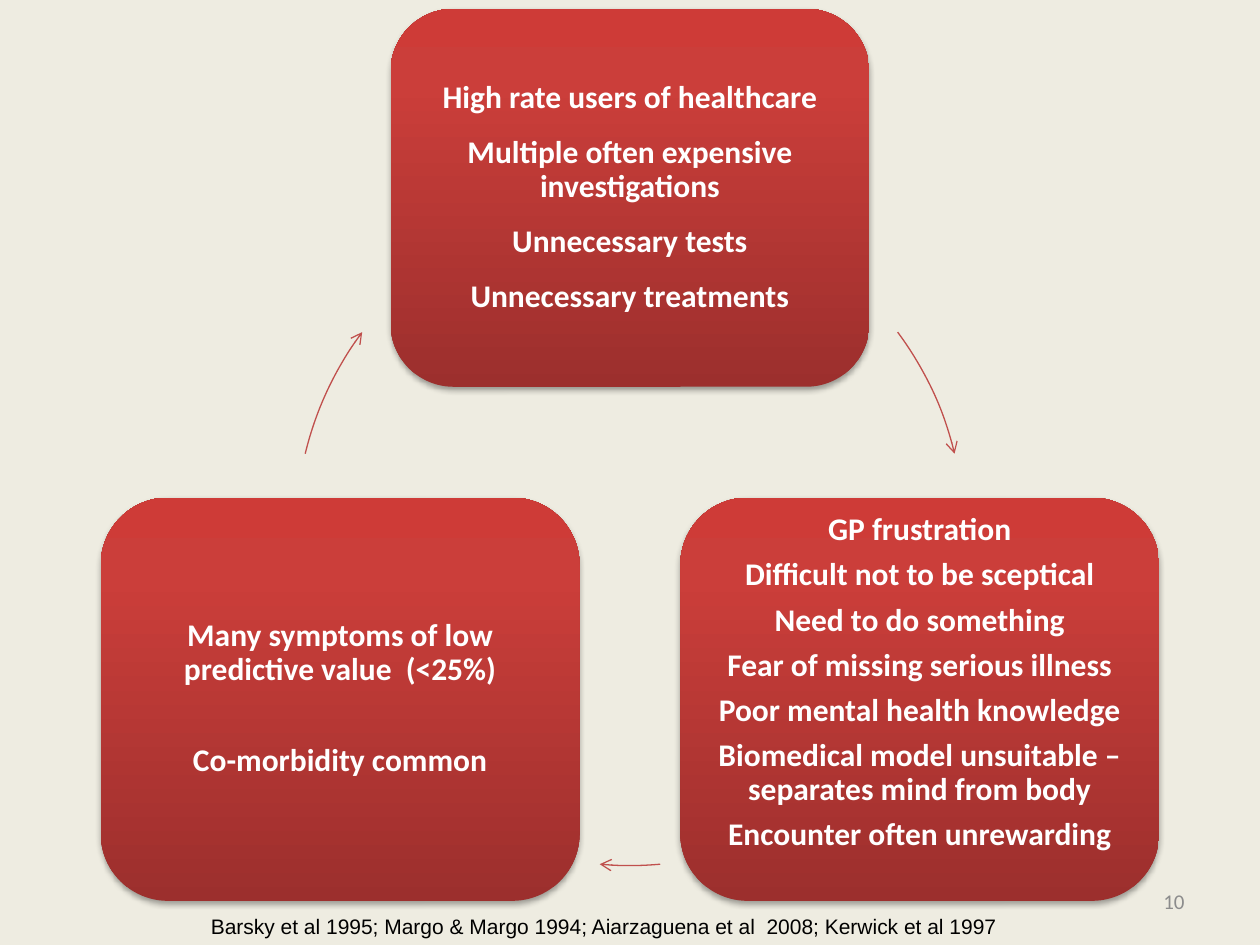
from lxml import etree
from pptx import Presentation
from pptx.dml.color import RGBColor
from pptx.enum.shapes import MSO_SHAPE as SHAPE
from pptx.enum.text import MSO_ANCHOR as ANCHOR, PP_ALIGN as ALIGN
from pptx.oxml import parse_xml
from pptx.oxml.ns import nsdecls, qn
from pptx.util import Inches, Pt

COLORS = {
    "background": "EEECE1", "dark": "9C2F2D", "mid": "CB3E3A", "light": "CE3B37",
    "arrow": "C0504D", "white": "FFFFFF", "black": "000000", "number": "8C8C8C",
}
GRADIENT = [(0, "dark"), (80, "mid"), (100, "light")]

BOXES = [
    {"at": (3.1, 0.07, 3.8, 3), "after": 12, "insets": (0.07, 0.07), "lines": [
        "High rate users of healthcare",
        "Multiple often expensive investigations",
        "Unnecessary tests",
        "Unnecessary treatments"]},
    {"at": (5.4, 3.95, 3.8, 3.2), "after": 6.3, "insets": (0, 0.26), "lines": [
        "GP frustration",
        "Difficult not to be sceptical",
        "Need to do something",
        "Fear of missing serious illness",
        "Poor mental health knowledge",
        "Biomedical model unsuitable –separates mind from body",
        "Encounter often unrewarding"]},
    {"at": (0.8, 3.95, 3.8, 3.2), "after": 32.5, "insets": (0.07, 0.07), "lines": [
        "Many symptoms of low predictive value  (<25%)",
        "Co-morbidity common"]},
]
CYCLE = (2.35, 1.57, 5.3, 5.3)
ARROW_ANGLES = [(323.3, 346.5), (84.8, 95.2), (193.5, 216.7)]
PAGE_NUMBER = "10"
CITATION = "Barsky et al 1995; Margo & Margo 1994; Aiarzaguena et al  2008; Kerwick et al 1997"


def rgb(name):
    return RGBColor.from_string(COLORS[name])


def place(at):
    return [Inches(v) for v in at]


def add_run(p, text, size, font, color, bold=False):
    r = p.add_run()
    r.text = text
    r.font.size, r.font.name, r.font.bold = Pt(size), font, bold
    r.font.color.rgb = rgb(color)


def add_box(s, at, after, insets, lines):
    sp = s.shapes.add_shape(SHAPE.ROUNDED_RECTANGLE, *place(at))
    stops = "".join(f'<a:gs pos="{pos * 1000}"><a:srgbClr val="{COLORS[name]}"/></a:gs>'
                    for pos, name in GRADIENT)
    props = sp.element.spPr
    props.append(parse_xml(
        f'<a:gradFill {nsdecls("a")} rotWithShape="1"><a:gsLst>{stops}</a:gsLst>'
        '<a:lin ang="16200000" scaled="0"/></a:gradFill>'))
    sp.line.fill.background()
    props.append(parse_xml(
        f'<a:effectLst {nsdecls("a")}><a:outerShdw blurRad="{Pt(3.1)}" dist="{Pt(1.8)}" '
        f'dir="5400000" rotWithShape="0"><a:srgbClr val="{COLORS["black"]}">'
        '<a:alpha val="35000"/></a:srgbClr></a:outerShdw></a:effectLst>'))
    tf = sp.text_frame
    tf.word_wrap, tf.vertical_anchor = True, ANCHOR.MIDDLE
    tf.margin_left = tf.margin_right = Inches(0.07)
    tf.margin_top, tf.margin_bottom = place(insets)
    for i, line in enumerate(lines):
        p = tf.add_paragraph() if i else tf.paragraphs[0]
        p.alignment, p.line_spacing, p.space_after = ALIGN.CENTER, 0.9, Pt(after)
        add_run(p, line, 18, "Calibri", "white", True)


def add_arrow(s, angles):
    sp = s.shapes.add_shape(SHAPE.ARC, *place(CYCLE))
    for i, angle in enumerate(angles):
        sp.adjustments[i] = angle * 0.6
    sp.shadow.inherit = False
    sp.fill.background()
    sp.line.color.rgb, sp.line.width = rgb("arrow"), Pt(0.75)
    etree.SubElement(sp.element.spPr.find(qn("a:ln")), qn("a:tailEnd"), type="arrow")


def add_label(s, at, text, font, color, align, anchor):
    tf = s.shapes.add_textbox(*place(at)).text_frame
    tf.word_wrap, tf.vertical_anchor = True, anchor
    p = tf.paragraphs[0]
    p.alignment = align
    add_run(p, text, 12, font, color)


def main():
    prs = Presentation()
    prs.slide_width, prs.slide_height = Inches(10), Inches(7.5)
    s = prs.slides.add_slide(prs.slide_layouts[6])
    s.background.fill.solid()
    s.background.fill.fore_color.rgb = rgb("background")
    for box, angles in zip(BOXES, ARROW_ANGLES):
        add_box(s, **box)
        add_arrow(s, angles)
    add_label(s, (7.17, 6.95, 2.33, 0.4), PAGE_NUMBER, "Calibri", "number",
              ALIGN.RIGHT, ANCHOR.MIDDLE)
    add_label(s, (0.17, 7.2, 9.25, 0.3), CITATION, "Arial", "black",
              ALIGN.CENTER, ANCHOR.TOP)
    prs.save("out.pptx")


if __name__ == "__main__":
    main()
